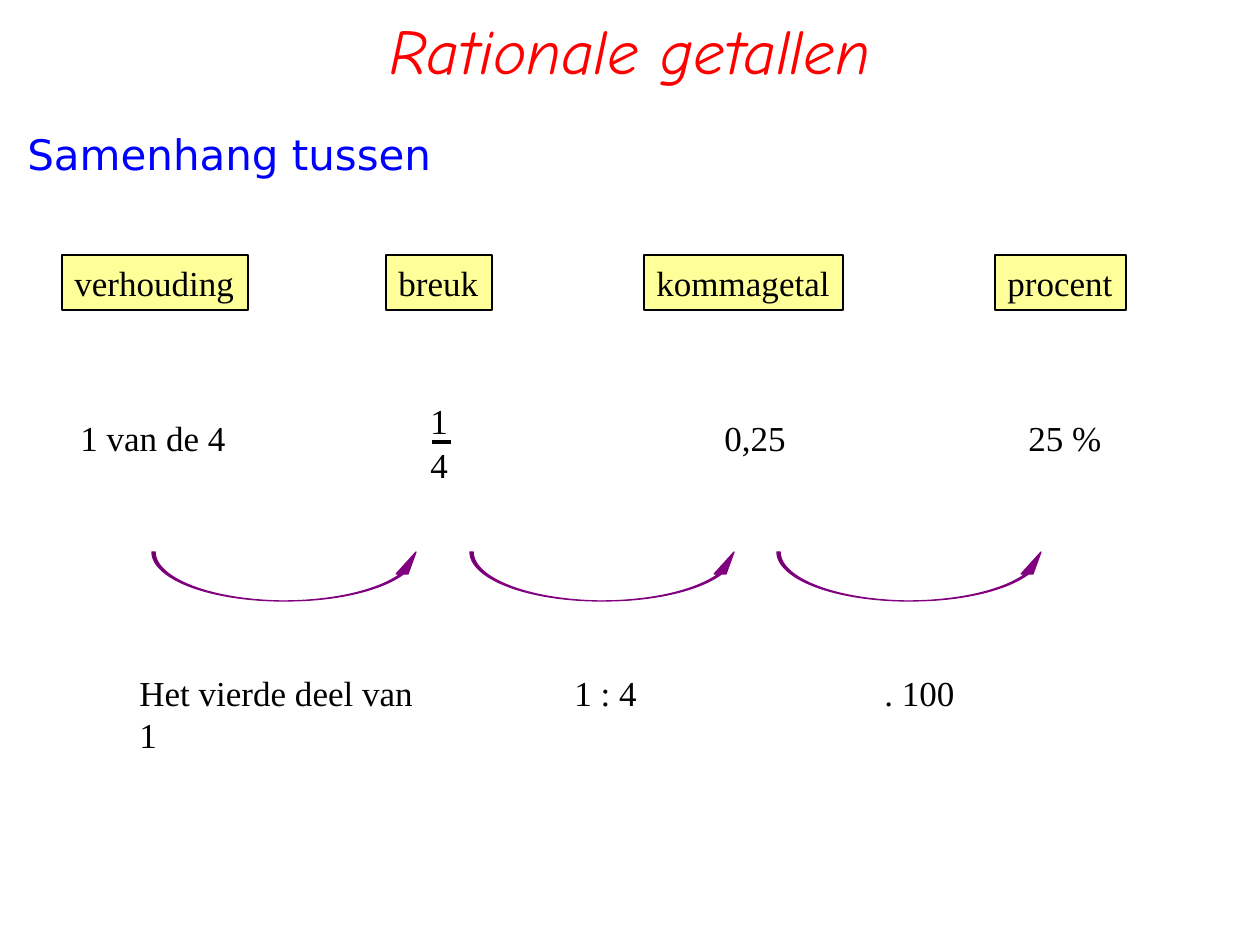
from dataclasses import dataclass

from lxml import etree
from pptx import Presentation, util as u
from pptx.dml.color import RGBColor
from pptx.enum import shapes, text
from pptx.oxml.ns import qn

SCALE = u.Inches(1) / 126


@dataclass(frozen=True)
class Theme:
    black: str = "000000"
    red: str = "FF0000"
    blue: str = "0000FF"
    yellow: str = "FFFF99"
    purple: str = "800080"
    title_font: str = "Comic Neue"
    heading_font: str = "DejaVu Sans"
    body_font: str = "Times New Roman"
    title_size: int = 36
    heading_size: int = 24
    body_size: int = 20
    outline: float = 0.75
    fraction_bar: float = 2


@dataclass(frozen=True)
class Label:
    words: str
    left: int
    width: int


@dataclass(frozen=True)
class Step:
    arrow_left: int
    caption: Label
    wrap: bool = False


THEME = Theme()
BODY = {"name": THEME.body_font, "size": u.Pt(THEME.body_size)}
TITLE = {"name": THEME.title_font, "size": u.Pt(THEME.title_size), "italic": True}
HEADING = {"name": THEME.heading_font, "size": u.Pt(THEME.heading_size)}

ROW_HEIGHT = 54
FORMS = [
    Label("verhouding", 62, 186),
    Label("breuk", 386, 106),
    Label("kommagetal", 644, 199),
    Label("procent", 995, 131),
]
VALUES = [Label("1 van de 4", 68, 170), Label("0,25", 712, 87), Label("25 %", 1016, 98)]
STEPS = [
    Step(152, Label("Het vierde deel van 1", 127, 324), wrap=True),
    Step(470, Label("1 : 4", 562, 87)),
    Step(777, Label(". 100", 872, 96)),
]


def px(*lengths: int) -> list[u.Emu]:
    return [u.Emu(round(length * SCALE)) for length in lengths]


def write(shape, words: str, formats: dict, color: str = THEME.black,
          align=text.PP_ALIGN.LEFT, anchor=text.MSO_ANCHOR.TOP, wrap: bool = False) -> None:
    frame = shape.text_frame
    settings = {"word_wrap": wrap, "vertical_anchor": anchor, "auto_size": text.MSO_AUTO_SIZE.NONE}
    for name, value in settings.items():
        setattr(frame, name, value)
    para = frame.paragraphs[0]
    para.alignment = align
    span = para.add_run()
    span.text = words
    for name, value in formats.items():
        setattr(span.font, name, value)
    span.font.color.rgb = RGBColor.from_string(color)


def paint(shape, fill: str, line: str) -> None:
    shape.shadow.inherit = False
    shape.fill.solid()
    shape.fill.fore_color.rgb = RGBColor.from_string(fill)
    shape.line.color.rgb = RGBColor.from_string(line)
    shape.line.width = u.Pt(THEME.outline)


def draw_label(parent, label: Label, top: int, wrap: bool = False) -> None:
    box = parent.add_textbox(*px(label.left, top, label.width, ROW_HEIGHT))
    write(box, label.words, BODY, wrap=wrap)


def draw_form(parent, label: Label) -> None:
    box = parent.add_shape(shapes.MSO_SHAPE.RECTANGLE, *px(label.left, 255, label.width, 55))
    paint(box, THEME.yellow, THEME.black)
    write(box, label.words, BODY)


def draw_fraction(parent) -> None:
    group = parent.add_group_shape().shapes
    for digit, top in (("1", 393), ("4", 437)):
        draw_label(group, Label(digit, 418, 43), top)
    bar = group.add_connector(shapes.MSO_CONNECTOR.STRAIGHT, *px(432, 442, 451, 442))
    bar.line.color.rgb = RGBColor.from_string(THEME.black)
    bar.line.width = u.Pt(THEME.fraction_bar)
    etree.SubElement(bar.line._get_or_add_ln().getparent(), qn("a:effectLst"))


def draw_step(parent, step: Step) -> None:
    group = parent.add_group_shape().shapes
    arrow = group.add_shape(shapes.MSO_SHAPE.CURVED_UP_ARROW, *px(step.arrow_left, 552, 270, 49))
    for index, value in enumerate((0.064, 0.243, 0.449)):
        arrow.adjustments[index] = value
    paint(arrow, THEME.purple, THEME.purple)
    draw_label(group, step.caption, 665, step.wrap)


def main() -> None:
    deck = Presentation()
    deck.slide_width, deck.slide_height = px(1260, 945)
    page = deck.slides.add_slide(deck.slide_layouts[6])

    title = page.shapes.add_textbox(*px(63, 6, 1134, 87))
    write(title, "Rationale getallen", TITLE, THEME.red,
          text.PP_ALIGN.CENTER, text.MSO_ANCHOR.MIDDLE, wrap=True)
    heading = page.shapes.add_textbox(*px(15, 122, 430, 63))
    write(heading, "Samenhang tussen", HEADING, THEME.blue)

    for form in FORMS:
        draw_form(page.shapes, form)
    for value in VALUES:
        draw_label(page.shapes, value, 410)
    draw_fraction(page.shapes)
    for step in STEPS:
        draw_step(page.shapes, step)

    deck.save("out.pptx")


if __name__ == "__main__":
    main()
